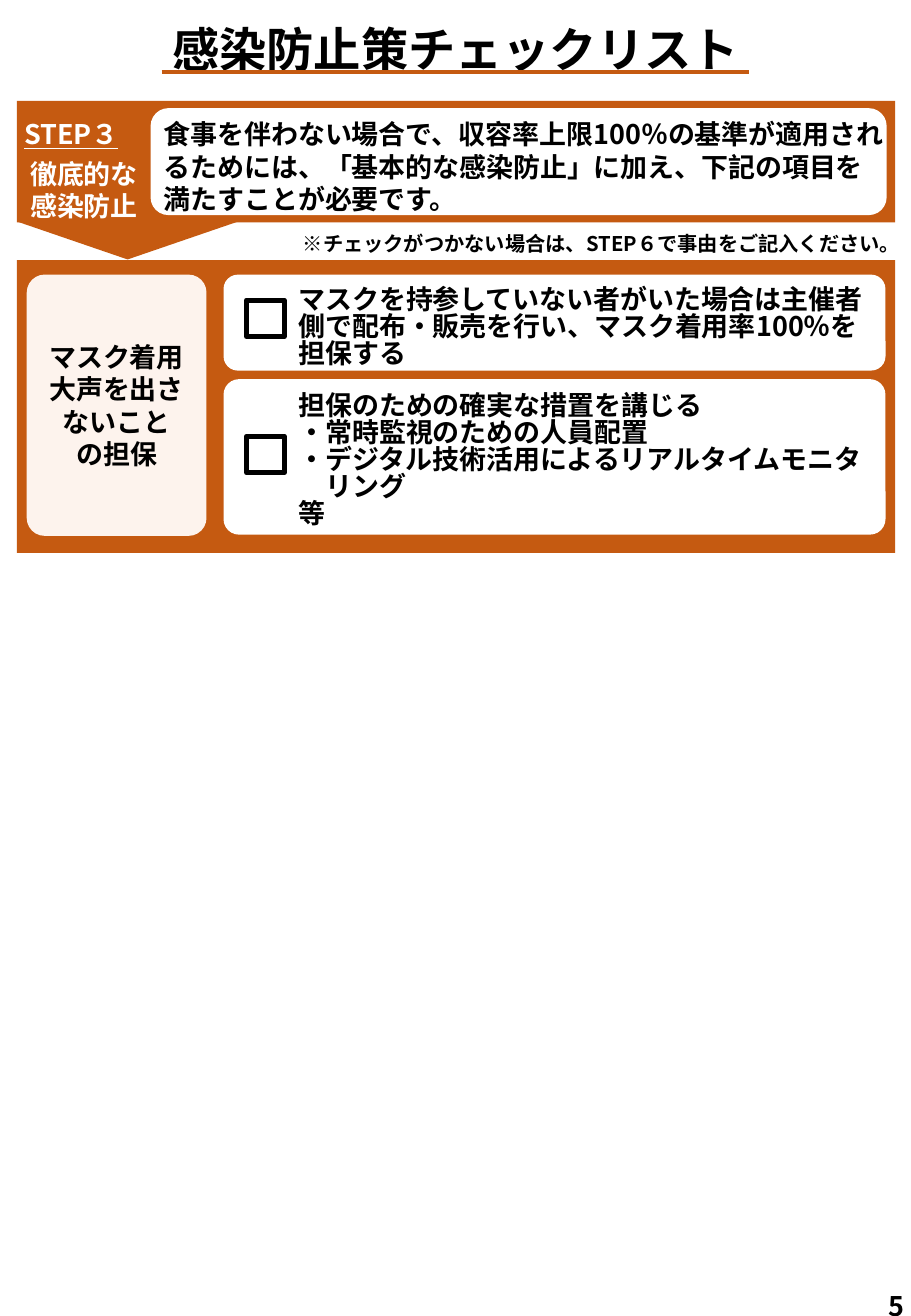
from lxml import etree
from pptx import Presentation
from pptx import util as u
from pptx.dml.color import RGBColor
from pptx.enum import shapes, text
from pptx.oxml.ns import qn

PX = 9144  # 100 px to the inch
COLORS = {"orange": "C55A11", "cream": "FDF3ED", "white": "FFFFFF", "black": "000000"}
FONT = "Noto Sans CJK JP"
SHAPE = shapes.MSO_SHAPE
ALIGN = text.PP_ALIGN
ANCHOR = text.MSO_ANCHOR


def rgb(name):
    return RGBColor.from_string(COLORS[name])


class Checklist:
    def __init__(self, s):
        self.s = s

    def box(self, at):
        return [v * PX for v in at]

    def style(self, tf, lines, size=16, color="black", align=ALIGN.LEFT,
              anchor=ANCHOR.TOP, leading=None, inset=(10, 5)):
        tf.text = "\n".join(lines)
        tf.word_wrap = True
        tf.auto_size = text.MSO_AUTO_SIZE.NONE
        tf.vertical_anchor = anchor
        tf.margin_left = tf.margin_right = inset[0] * PX
        tf.margin_top = tf.margin_bottom = inset[1] * PX
        for p in tf.paragraphs:
            p.alignment = align
            if leading:
                p.line_spacing = u.Pt(leading)
            for r in p.runs:
                r.font.name, r.font.size, r.font.bold = FONT, u.Pt(size), True
                r.font.color.rgb = rgb(color)
                ea = etree.SubElement(r.font._element, qn("a:ea"))
                ea.set("typeface", FONT)

    def title(self, at, words):
        sp = self.s.shapes.title
        sp.left, sp.top, sp.width, sp.height = self.box(at)
        self.style(sp.text_frame, [words], size=28, align=ALIGN.CENTER)

    def text(self, at, *lines, **look):
        tf = self.s.shapes.add_textbox(*self.box(at)).text_frame
        self.style(tf, lines, **look)
        return tf

    def shape(self, kind, at, fill=None, line=None, adj=None):
        sp = self.s.shapes.add_shape(kind, *self.box(at))
        sp.shadow.inherit = False
        if fill:
            sp.fill.solid()
            sp.fill.fore_color.rgb = rgb(fill)
        else:
            sp.fill.background()
        if line:
            sp.line.color.rgb, sp.line.width = rgb(line), u.Pt(3)
        else:
            sp.line.fill.background()
        if adj:
            sp.adjustments[0] = adj
        return sp

    def rule(self, x1, x2, y, color):
        c = self.s.shapes.add_connector(shapes.MSO_CONNECTOR.STRAIGHT, *self.box((x1, y, x2, y)))
        c.line.color.rgb, c.line.width = rgb(color), u.Pt(2.25)
        etree.SubElement(c._element.spPr, qn("a:effectLst"))

    def check_item(self, top, height, adj, box_top, text_top, lines):
        self.shape(SHAPE.ROUNDED_RECTANGLE, (184, top, 545, height), "white", adj=adj)
        self.shape(SHAPE.RECTANGLE, (203, box_top, 31, 30), line="black")
        self.text((236, text_top, 514, height), *lines, leading=16)


def main():
    prs = Presentation()
    prs.slide_width, prs.slide_height = 750 * PX, 1083 * PX
    s = Checklist(prs.slides.add_slide(prs.slide_layouts[5]))

    # Title
    s.title((48, 12, 654, 57), "感染防止策チェックリスト")
    s.rule(133, 617, 59, "orange")

    # Step banner with a downward arrow
    s.shape(SHAPE.PENTAGON, (74, 92, 62, 181), "orange").rotation = 90
    s.shape(SHAPE.RECTANGLE, (14, 83, 723, 100), "orange")
    s.shape(SHAPE.ROUNDED_RECTANGLE, (124, 89, 606, 88), "white")
    step = s.text((10, 92, 119, 96), "STEP３", " 徹底的な", " 感染防止", color="white")
    step.paragraphs[0].runs[0].font.underline = True
    step.paragraphs[1].space_before = u.Pt(4.4)
    s.text((125, 92, 614, 91),
           "食事を伴わない場合で、収容率上限100％の基準が適用されるためには、"
           "「基本的な感染防止」に加え、下記の項目を満たすことが必要です。")
    s.text((212, 183, 539, 33),
           "※チェックがつかない場合は、STEP６で事由をご記入ください。",
           size=12, align=ALIGN.RIGHT, leading=16)

    # Checklist panel
    s.shape(SHAPE.RECTANGLE, (14, 214, 723, 241), "orange")
    topic = s.shape(SHAPE.ROUNDED_RECTANGLE, (22, 226, 148, 215), "cream", adj=0.1)
    s.style(topic.text_frame, ["マスク着用", "大声を出さないこと", "の担保"],
            align=ALIGN.CENTER, anchor=ANCHOR.MIDDLE, inset=(7, 4))
    s.check_item(226, 79, 0.15, 247, 232, [
        "マスクを持参していない者がいた場合は主催者",
        "側で配布・販売を行い、マスク着用率100％を",
        "担保する"])
    s.check_item(312, 128, 0.1, 359, 319, [
        "担保のための確実な措置を講じる",
        "・常時監視のための人員配置",
        "・デジタル技術活用によるリアルタイムモニタ",
        "　リング",
        "等"])

    # Page number
    s.text((722, 1056, 28, 27), "5").word_wrap = False

    prs.save("out.pptx")


if __name__ == "__main__":
    main()
